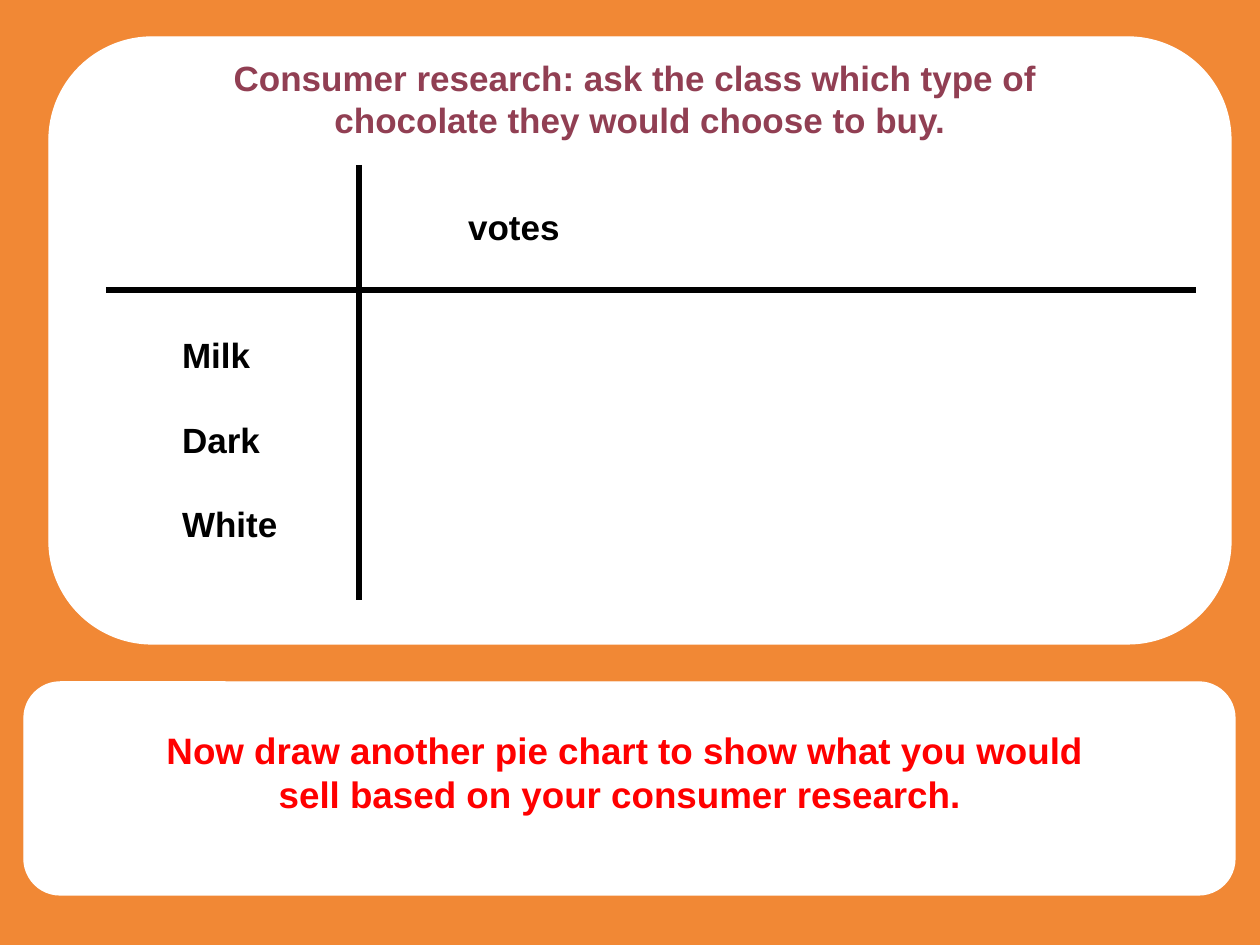
from pptx import Presentation
from pptx.dml.color import RGBColor as RGB
from pptx.enum.shapes import MSO_CONNECTOR as Line, MSO_SHAPE as Kind
from pptx.enum.text import MSO_ANCHOR as Anchor, PP_ALIGN as Align
from pptx.oxml.ns import qn
from pptx.util import Pt
from lxml.etree import SubElement

PX = 914400 / 126


def px(*nums):
    return [round(n * PX) for n in nums]


def write(shape, lines, size=20, color="000000", align=Align.LEFT, gap=0, pad=(10, 5)):
    frame = shape.text_frame
    frame.word_wrap = True
    frame.vertical_anchor = Anchor.TOP
    frame.margin_left = frame.margin_right = px(pad[0])[0]
    frame.margin_top = frame.margin_bottom = px(pad[1])[0]
    frame.text = "\n".join(lines)
    for para in frame.paragraphs:
        para.alignment = align
        para.space_before = Pt(0)
        para.space_after = Pt(gap)
        para.line_spacing = 1.0
        font = para.runs[0].font
        font.name, font.size, font.bold = "Arial", Pt(size), True
        font.color.rgb = RGB.from_string(color)


deck = Presentation()
deck.slide_width, deck.slide_height = px(1260, 945)
slide = deck.slides.add_slide(deck.slide_layouts[5])
slide.background.fill.solid()
slide.background.fill.fore_color.rgb = RGB.from_string("F18835")
shapes = slide.shapes

for box in [(49, 37, 1182, 607), (24, 682, 1211, 213)]:
    card = shapes.add_shape(Kind.ROUNDED_RECTANGLE, *px(*box))
    card.adjustments[0] = 0.17
    card.shadow.inherit = False
    card.fill.solid()
    card.fill.fore_color.rgb = card.line.color.rgb = RGB.from_string("FFFFFF")
    card.line.width = Pt(0.75)

for ends in [(106, 290, 1196, 290), (359, 165, 359, 600)]:
    rule = shapes.add_connector(Line.STRAIGHT, *px(*ends))
    rule.line.color.rgb = RGB.from_string("000000")
    rule.line.width = Pt(3)
    SubElement(rule.element.spPr, qn("a:effectLst"))

task = shapes.add_textbox(*px(33, 723, 1194, 144))
write(task, ["Now draw another pie chart to show what you would ",
             "sell based on your consumer research.  "],
      size=21, color="FF0000", align=Align.CENTER)

kinds = shapes.add_textbox(*px(172, 329, 158, 252))
write(kinds, ["Milk", "Dark", "White"], gap=24)

votes = shapes.add_textbox(*px(458, 200, 118, 52))
write(votes, ["votes"])

title = shapes.title
title.left, title.top, title.width, title.height = px(84, 50, 1112, 97)
write(title, ["Consumer research: ask the class which type of ",
              "chocolate they would choose to buy."],
      color="913F53", align=Align.CENTER, pad=(13, 6))
shapes.element.append(title.element)

deck.save("out.pptx")
